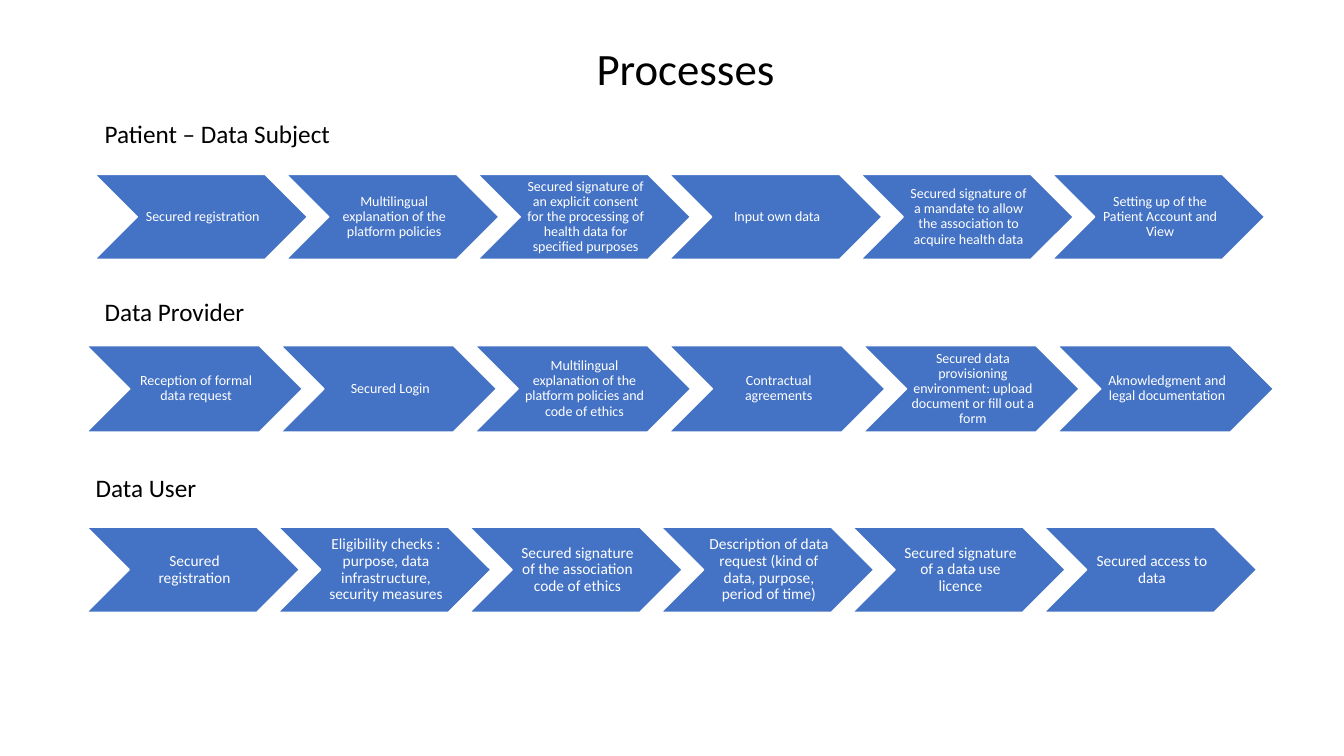
from pptx import Presentation
from pptx.dml.color import RGBColor
from pptx.enum.shapes import MSO_SHAPE
from pptx.enum.text import MSO_ANCHOR, PP_ALIGN
from pptx.util import Inches, Pt

BLUE = RGBColor(0x44, 0x72, 0xC4)
WHITE = RGBColor(0xFF, 0xFF, 0xFF)
BLACK = RGBColor(0x00, 0x00, 0x00)
FONT = "Calibri"

# Chevron proportions, as shares of the chevron width
STEP_SHARE = 0.9
HEIGHT_SHARE = 0.4

# Heading, heading position, row position, chevron width, text size, inset, steps
PROCESSES = [
    ("Patient – Data Subject", (0.94, 1.12), (0.94, 1.73), 2.11, 10, 0.01, [
        "Secured registration",
        "Multilingual explanation of the platform policies",
        "Secured signature of an explicit consent for the processing of "
        "health data for specified purposes",
        "Input own data",
        "Secured signature of a mandate to allow the association to "
        "acquire health data",
        "Setting up of the Patient Account and View",
    ]),
    ("Data Provider", (0.94, 2.89), (0.86, 3.43), 2.14, 10, 0.01, [
        "Reception of formal data request",
        "Secured Login",
        "Multilingual explanation of the platform policies and code of ethics",
        "Contractual agreements",
        "Secured data provisioning environment: upload document or fill out a form",
        "Aknowledgment and legal documentation",
    ]),
    ("Data User", (0.85, 4.64), (0.86, 5.23), 2.11, 11, 0.02, [
        "Secured registration",
        "Eligibility checks : purpose, data infrastructure, security measures",
        "Secured signature of the association code of ethics",
        "Description of data request (kind of data, purpose, period of time)",
        "Secured signature of a data use licence",
        "Secured access to data",
    ]),
]


def write(shape, text, size, color=BLACK, align=PP_ALIGN.LEFT,
          anchor=MSO_ANCHOR.TOP, spacing=1.0, inset=None):
    frame = shape.text_frame
    frame.word_wrap = True
    frame.vertical_anchor = anchor
    if inset is not None:
        frame.margin_left = Inches(inset + 0.03)
        frame.margin_top = frame.margin_right = frame.margin_bottom = Inches(inset)
    paragraph = frame.paragraphs[0]
    paragraph.alignment = align
    paragraph.line_spacing = spacing
    run = paragraph.add_run()
    run.text = text
    run.font.name = FONT
    run.font.size = Pt(size)
    run.font.color.rgb = color


presentation = Presentation()
presentation.slide_width = Inches(13.33)
presentation.slide_height = Inches(7.5)
slide = presentation.slides.add_slide(presentation.slide_layouts[6])

# Title
title = slide.shapes.add_textbox(Inches(1.2), Inches(0.35), Inches(11.2), Inches(0.64))
write(title, "Processes", size=32, align=PP_ALIGN.CENTER)

# One heading and one row of chevrons per process
for name, heading_at, row_at, width, size, inset, steps in PROCESSES:
    heading_left, heading_top = heading_at
    heading = slide.shapes.add_textbox(
        Inches(heading_left), Inches(heading_top), Inches(3.05), Inches(0.4))
    write(heading, name, size=18)

    row_left, row_top = row_at
    for column, step in enumerate(steps):
        chevron = slide.shapes.add_shape(
            MSO_SHAPE.CHEVRON,
            Inches(row_left + column * STEP_SHARE * width), Inches(row_top),
            Inches(width), Inches(HEIGHT_SHARE * width))
        chevron.shadow.inherit = False
        chevron.fill.solid()
        chevron.fill.fore_color.rgb = BLUE
        chevron.line.color.rgb = WHITE
        chevron.line.width = Pt(1)
        write(chevron, step, size=size, color=WHITE, align=PP_ALIGN.CENTER,
              anchor=MSO_ANCHOR.MIDDLE, spacing=0.9, inset=inset)

presentation.save("out.pptx")
